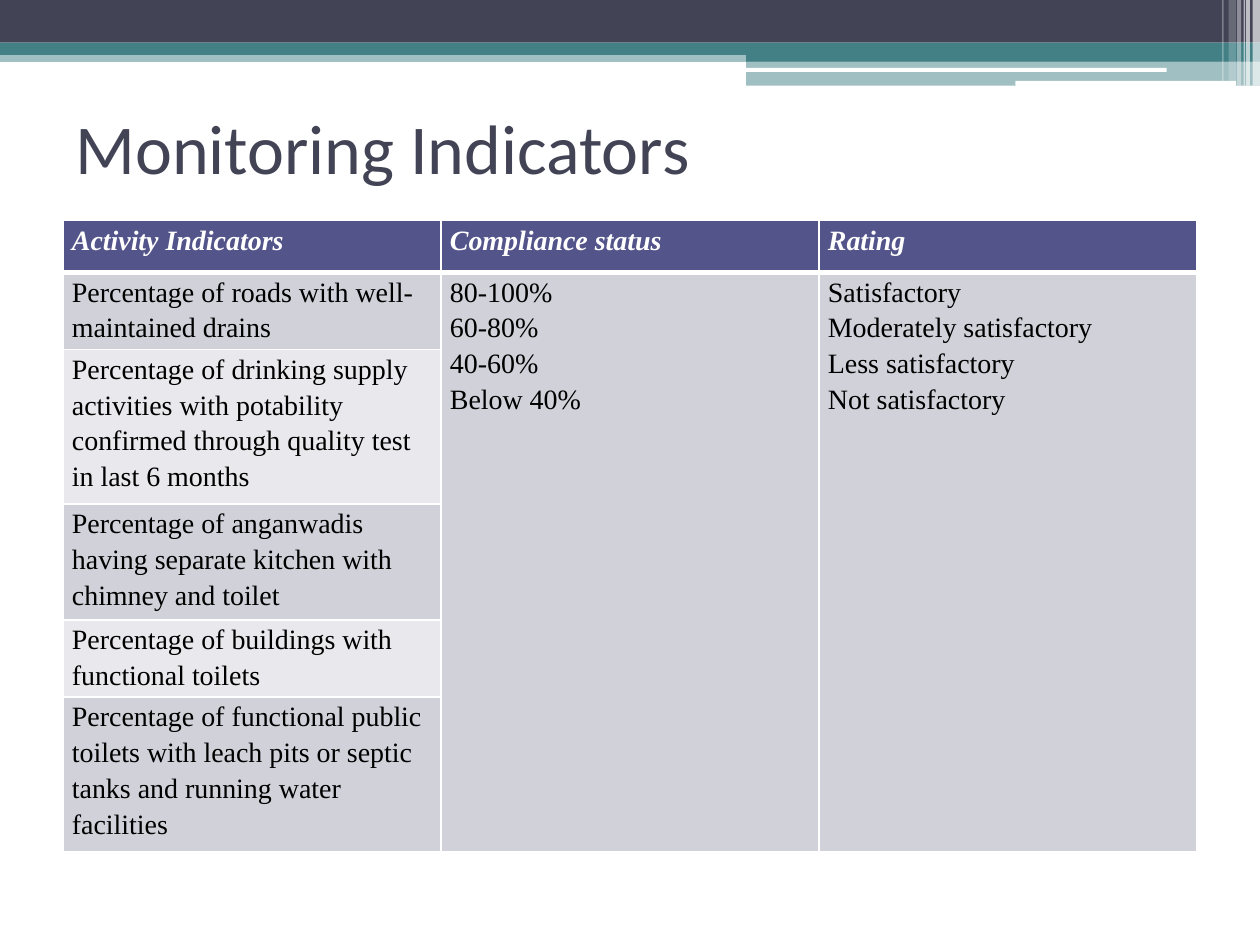
from dataclasses import dataclass

from lxml import etree
from pptx import Presentation, util as u
from pptx.dml.color import RGBColor
from pptx.enum import shapes, text
from pptx.oxml import ns


@dataclass(frozen=True)
class Theme:
    ink: str = "424456"
    teal: str = "438086"
    white: str = "FFFFFF"
    black: str = "000000"
    header: str = "53548A"
    row_dark: str = "D1D1DA"
    row_light: str = "E9E9ED"
    title_font: str = "Calibri"
    table_font: str = "Times New Roman"
    title_size: int = 40
    table_size: int = 16


@dataclass(frozen=True)
class Band:
    left: float
    top: float
    width: float
    height: float
    color: str
    opacity: int = 100
    rounded: bool = False


THEME = Theme()
SLIDE_WIDTH = 25.4
STEP_LEFT = 15.04
BANDS = [
    Band(0, 1.02, SLIDE_WIDTH, 0.23, THEME.teal, 50),
    Band(0, 0, SLIDE_WIDTH, 0.86, THEME.ink),
    Band(0, 0.86, SLIDE_WIDTH, 0.25, THEME.teal),
    Band(STEP_LEFT, 0.99, SLIDE_WIDTH - STEP_LEFT, 0.25, THEME.teal),
    Band(STEP_LEFT, 1.22, SLIDE_WIDTH - STEP_LEFT, 0.51, THEME.teal, 50),
    Band(15.01, 1.37, 8.51, 0.08, THEME.white, rounded=True),
    Band(20.47, 1.63, 4.45, 0.1, THEME.white, rounded=True),
]
STRIPES = [
    Band(left, 0, width, height, THEME.white, opacity)
    for left, width, height, opacity in [
        (25.25, 0.15, 1.73, 65),
        (25.12, 0.08, 1.73, 65),
        (25.07, 0.03, 1.73, 60),
        (24.94, 0.08, 1.73, 40),
        (24.77, 0.15, 1.63, 20),
        (24.64, 0.03, 1.63, 30),
    ]
]
HEADINGS = ["Activity Indicators", "Compliance status", "Rating"]
INDICATORS = [
    "Percentage of roads with well-maintained drains",
    "Percentage of drinking supply activities with potability confirmed "
    "through quality test in last 6 months",
    "Percentage of anganwadis having separate kitchen with chimney and toilet",
    "Percentage of buildings with functional toilets",
    "Percentage of functional public toilets with leach pits or septic tanks "
    "and running water facilities",
]
SCALES = [
    "80-100%\n60-80%\n40-60%\nBelow 40%",
    "Satisfactory\nModerately satisfactory\nLess satisfactory\nNot satisfactory",
]


def draw_band(slide, band: Band) -> None:
    preset = shapes.MSO_SHAPE.ROUNDED_RECTANGLE if band.rounded else shapes.MSO_SHAPE.RECTANGLE
    bar = slide.shapes.add_shape(
        preset, u.Cm(band.left), u.Cm(band.top), u.Cm(band.width), u.Cm(band.height)
    )
    bar.shadow.inherit = False
    bar.line.fill.background()
    bar.fill.solid()
    bar.fill.fore_color.rgb = RGBColor.from_string(band.color)
    if band.opacity < 100:
        color = bar.element.spPr.find(".//" + ns.qn("a:srgbClr"))
        etree.SubElement(color, ns.qn("a:alpha"), val=str(band.opacity * 1000))


def style_font(font, family: str, size: int, color: str) -> None:
    font.name = family
    font.size = u.Pt(size)
    font.color.rgb = RGBColor.from_string(color)


def draw_title(slide, wording: str) -> None:
    title = slide.shapes.add_textbox(u.Cm(1.27), u.Cm(1.47), u.Cm(22.86), u.Cm(2.97))
    frame = title.text_frame
    frame.word_wrap = True
    frame.vertical_anchor = text.MSO_ANCHOR.MIDDLE
    frame.text = wording
    style_font(frame.paragraphs[0].runs[0].font, THEME.title_font, THEME.title_size, THEME.ink)


def draw_borders(cell, bottom: float) -> None:
    properties = cell._tc.get_or_add_tcPr()
    for side, points in {"L": 1, "R": 1, "T": 1, "B": bottom}.items():
        edge = etree.SubElement(properties, ns.qn(f"a:ln{side}"), w=str(u.Pt(points)))
        paint = etree.SubElement(edge, ns.qn("a:solidFill"))
        etree.SubElement(paint, ns.qn("a:srgbClr"), val=THEME.white)


def style_cell(cell, fill: str, heading: bool) -> None:
    draw_borders(cell, bottom=3 if heading else 1)
    cell.fill.solid()
    cell.fill.fore_color.rgb = RGBColor.from_string(fill)
    cell.margin_left = cell.margin_right = u.Cm(0.18)
    cell.margin_top = cell.margin_bottom = 0
    for paragraph in cell.text_frame.paragraphs:
        paragraph.line_spacing = 1.15
        for run in paragraph.runs:
            color = THEME.white if heading else THEME.black
            style_font(run.font, THEME.table_font, THEME.table_size, color)
            run.font.bold = run.font.italic = heading


def draw_indicators(slide) -> None:
    row_height = 1.04
    row_count = len(INDICATORS) + 1
    table = slide.shapes.add_table(
        row_count, len(HEADINGS),
        u.Cm(1.27), u.Cm(4.45), u.Cm(22.86), u.Cm(row_height * row_count),
    ).table
    for row in table.rows:
        row.height = u.Cm(row_height)
    for column, heading in enumerate(HEADINGS):
        table.cell(0, column).text_frame.text = heading
    for row, indicator in enumerate(INDICATORS, 1):
        table.cell(row, 0).text_frame.text = indicator
    for column, scale in enumerate(SCALES, 1):
        table.cell(1, column).merge(table.cell(row_count - 1, column))
        table.cell(1, column).text_frame.text = scale
    for row in range(row_count):
        for column in range(len(HEADINGS)):
            striped = THEME.row_dark if row % 2 or column else THEME.row_light
            style_cell(table.cell(row, column), striped if row else THEME.header, row == 0)


def main() -> None:
    deck = Presentation()
    deck.slide_width, deck.slide_height = u.Cm(SLIDE_WIDTH), u.Cm(19.05)
    slide = deck.slides.add_slide(deck.slide_layouts[6])
    for band in BANDS + STRIPES:
        draw_band(slide, band)
    draw_title(slide, "Monitoring Indicators")
    draw_indicators(slide)
    deck.save("out.pptx")


if __name__ == "__main__":
    main()
